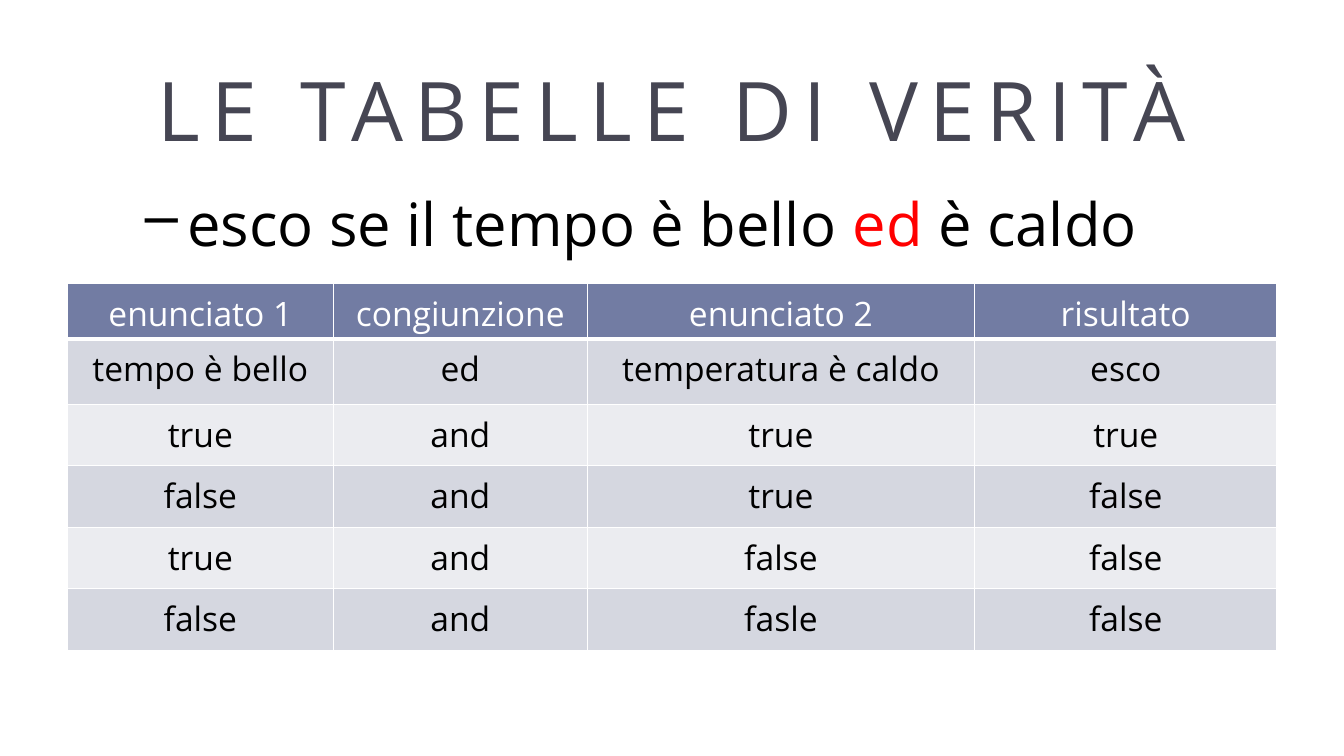
from lxml import etree
from pptx import Presentation
from pptx.dml.color import RGBColor
from pptx.enum.text import MSO_ANCHOR, PP_ALIGN
from pptx.oxml.ns import qn
from pptx.util import Cm, Pt

CENTER, LEFT = PP_ALIGN.CENTER, PP_ALIGN.LEFT
MIDDLE, TOP = MSO_ANCHOR.MIDDLE, MSO_ANCHOR.TOP
FONT = "Open Sans"
COLORS = {
    "title": "464653",
    "text": "000000",
    "accent": "FF0000",
    "white": "FFFFFF",
    "header": "727CA3",
    "band_dark": "D5D7E0",
    "band_light": "EBECF0",
}
TRUTH_ROWS = [
    ("enunciato 1", "congiunzione", "enunciato 2", "risultato"),
    ("tempo è bello", "ed", "temperatura è caldo", "esco"),
    ("true", "and", "true", "true"),
    ("false", "and", "true", "false"),
    ("true", "and", "false", "false"),
    ("false", "and", "fasle", "false"),
]
COLUMN_WIDTHS = (6.7, 6.4, 9.76, 7.62)
ROW_HEIGHTS = (1.4, 1.65, 1.55, 1.55, 1.55, 1.55)


def rgb(name):
    return RGBColor.from_string(COLORS[name])


def add_run(paragraph, words, size, color):
    run = paragraph.add_run()
    run.text = words
    run.font.name = FONT
    run.font.size = Pt(size)
    run.font.color.rgb = rgb(color)
    return run


def add_line_of_text(slide, box, anchor, align):
    frame = slide.shapes.add_textbox(*[Cm(length) for length in box]).text_frame
    frame.word_wrap = True
    frame.vertical_anchor = anchor
    frame.margin_top = frame.margin_bottom = 0
    paragraph = frame.paragraphs[0]
    paragraph.alignment = align
    return paragraph


def add_title(slide, box):
    heading = add_line_of_text(slide, box, MIDDLE, CENTER)
    run = add_run(heading, "LE TABELLE DI VERITÀ", 58.7, "title")
    run.font._element.set("spc", "800")


def add_statement(slide, box):
    statement = add_line_of_text(slide, box, TOP, LEFT)
    properties = statement._p.get_or_add_pPr()
    properties.set("lvl", "1")
    properties.set("marL", str(Cm(2.74)))
    properties.set("indent", str(Cm(-1.07)))
    etree.SubElement(properties, qn("a:buChar")).set("char", "–")
    for words, color in (
        ("esco se il tempo è bello ", "text"),
        ("ed", "accent"),
        (" è caldo", "text"),
    ):
        add_run(statement, words, 42.7, color)


def set_borders(cell, widths):
    properties = cell._tc.get_or_add_tcPr()
    for index, (side, width) in enumerate(widths.items()):
        line = etree.Element(qn(f"a:{side}"), w=str(Pt(width)))
        fill = etree.SubElement(line, qn("a:solidFill"))
        etree.SubElement(fill, qn("a:srgbClr")).set("val", COLORS["white"])
        properties.insert(index, line)


def add_truth_table(slide, box):
    table = slide.shapes.add_table(
        len(TRUTH_ROWS), len(COLUMN_WIDTHS), *[Cm(length) for length in box]
    ).table
    for column, width in zip(table.columns, COLUMN_WIDTHS):
        column.width = Cm(width)
    for row, height in zip(table.rows, ROW_HEIGHTS):
        row.height = Cm(height)
    for row_index, values in enumerate(TRUTH_ROWS):
        if row_index == 0:
            band, ink = "header", "white"
        else:
            band, ink = ("band_dark" if row_index % 2 else "band_light"), "text"
        widths = {
            "lnL": 1,
            "lnR": 1,
            "lnT": 3 if row_index == 1 else 1,
            "lnB": 3 if row_index == 0 else 1,
        }
        for column_index, value in enumerate(values):
            cell = table.cell(row_index, column_index)
            cell.fill.solid()
            cell.fill.fore_color.rgb = rgb(band)
            cell.margin_left = cell.margin_right = Cm(0.34)
            cell.margin_top = cell.margin_bottom = Cm(0.17)
            paragraph = cell.text_frame.paragraphs[0]
            paragraph.alignment = CENTER
            add_run(paragraph, value, 24, ink)
            set_borders(cell, widths)


def main():
    presentation = Presentation()
    presentation.slide_width = Cm(33.87)
    presentation.slide_height = Cm(19.05)
    slide = presentation.slides.add_slide(presentation.slide_layouts[6])
    slide.background.fill.solid()
    slide.background.fill.fore_color.rgb = rgb("white")
    add_title(slide, (1.7, 1.52, 30.48, 2.41))
    add_truth_table(slide, (1.7, 7.14, sum(COLUMN_WIDTHS), sum(ROW_HEIGHTS)))
    add_statement(slide, (1.73, 4.7, 30.4, 2.08))
    presentation.save("out.pptx")


if __name__ == "__main__":
    main()
